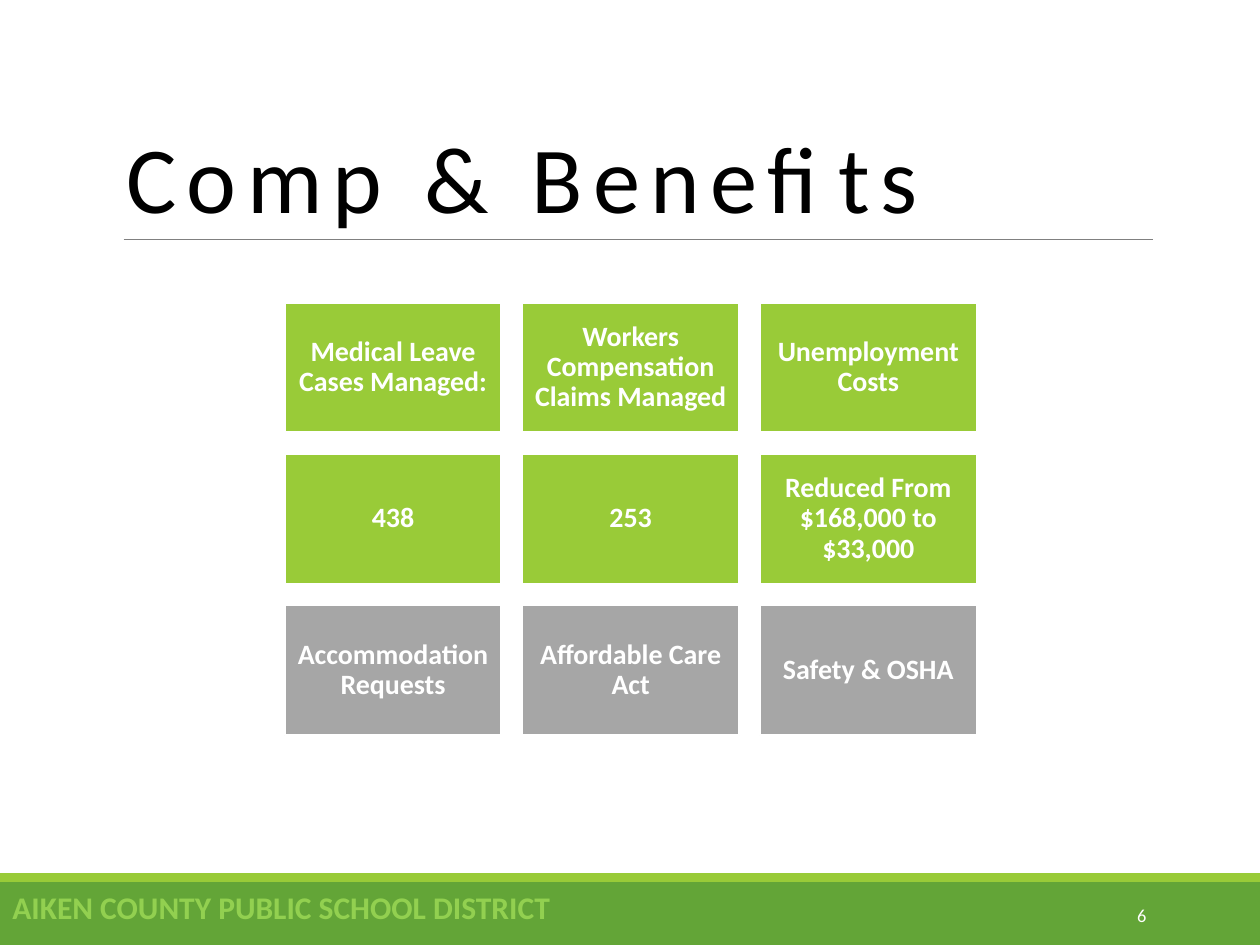
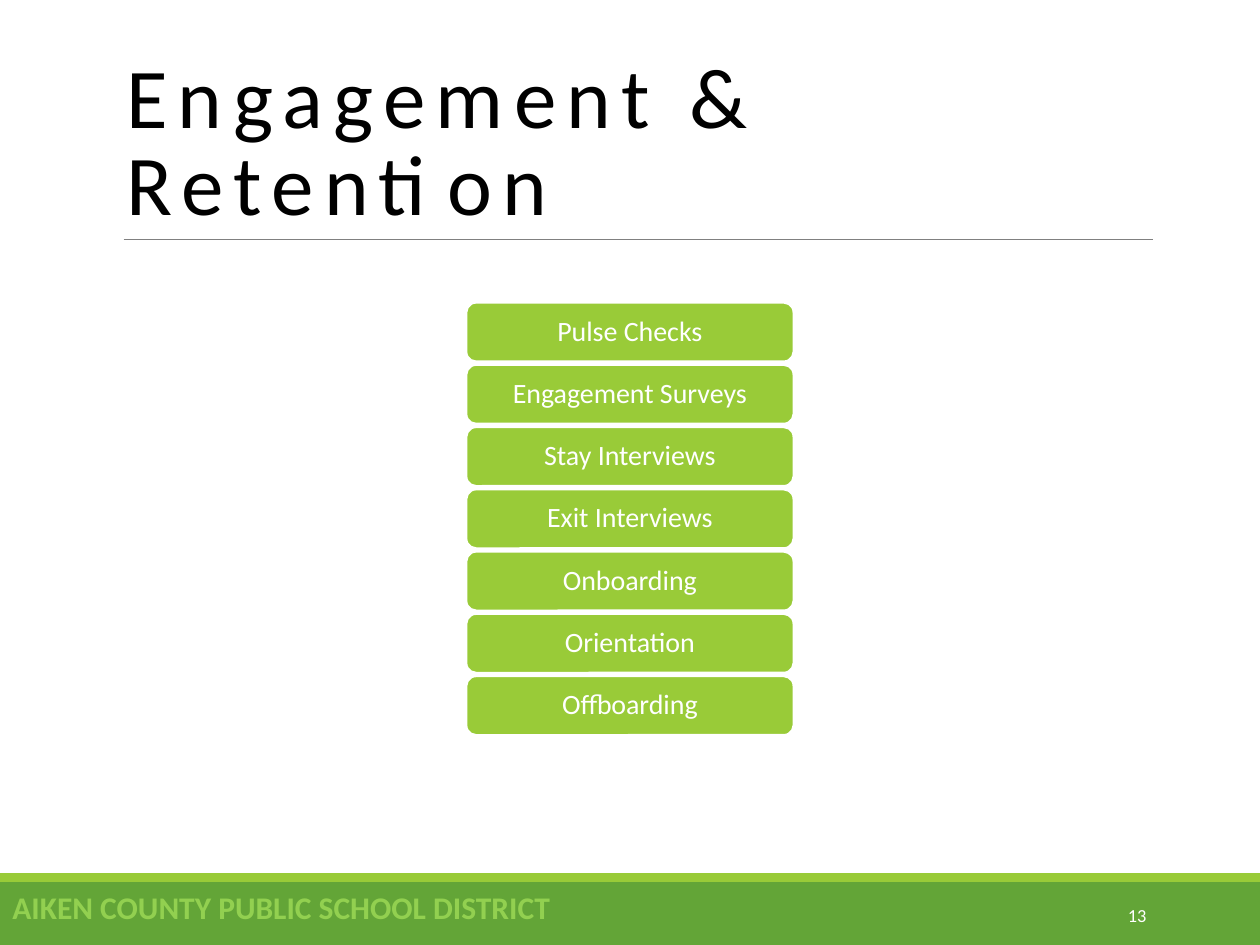
import pptx
import pptx.dml.color
import pptx.enum.shapes
import pptx.enum.text
import pptx.oxml.ns
import pptx.util
from lxml import etree

Cm = pptx.util.Cm
Pt = pptx.util.Pt
PRESET = pptx.enum.shapes.MSO_SHAPE
ALIGN = pptx.enum.text.PP_ALIGN
ANCHOR = pptx.enum.text.MSO_ANCHOR

COLORS = {
    "lime": "99CB38",
    "green": "63A537",
    "gray": "A6A6A6",
    "rule": "808080",
    "district": "92D050",
    "black": "000000",
    "white": "FFFFFF",
}
FONT = "Calibri"
TITLE_ONLY = 5
SLIDE_WIDTH, SLIDE_HEIGHT = 25.4, 19.05
TITLE_BOX = (2.29, 0.79, 20.96, 4.04)
FOOTER_BOX = (0, 17.6, SLIDE_WIDTH, 1.45)
GRID_BOX = (5.74, 6.1, 13.95, 8.72)
STACK_BOX = (9.4, 6.1, 6.6, 8.72)

BENEFITS = [
    ("lime", ["Medical Leave Cases Managed:", "Workers Compensation Claims Managed",
              "Unemployment Costs"]),
    ("lime", ["438", "253", "Reduced From $168,000 to $33,000"]),
    ("gray", ["Accommodation Requests", "Affordable Care Act", "Safety & OSHA"]),
]
PRACTICES = ["Pulse Checks", "Engagement Surveys", "Stay Interviews", "Exit Interviews",
             "Onboarding", "Orientation", "Offboarding"]


def rgb(color):
    return pptx.dml.color.RGBColor.from_string(COLORS[color])


def write_text(shape, text, size=16, color="white", bold=False, align=ALIGN.LEFT,
               anchor=ANCHOR.MIDDLE, line_spacing=1.0, letter_spacing=0, insets=(0.25, 0.13)):
    frame = shape.text_frame
    frame.word_wrap = True
    frame.auto_size = pptx.enum.text.MSO_AUTO_SIZE.NONE
    frame.vertical_anchor = anchor
    frame.margin_left = frame.margin_right = Cm(insets[0])
    frame.margin_top = frame.margin_bottom = Cm(insets[1])
    paragraph = frame.paragraphs[0]
    paragraph.alignment = align
    paragraph.line_spacing = line_spacing
    run = paragraph.add_run()
    run.text = text
    run.font.name = FONT
    run.font.size = Pt(size)
    run.font.bold = bold
    run.font.color.rgb = rgb(color)
    if letter_spacing:
        run.font._element.set("spc", str(letter_spacing * 100))


def add_block(slide, box, fill, line=None, preset=PRESET.RECTANGLE):
    shape = slide.shapes.add_shape(preset, *map(Cm, box))
    shape.shadow.inherit = False
    shape.fill.solid()
    shape.fill.fore_color.rgb = rgb(fill)
    if line:
        shape.line.color.rgb = rgb(line)
        shape.line.width = Pt(1.25)
    else:
        shape.line.fill.background()
    return shape


def add_title(slide, box, text, size):
    left, top, width, height = box
    title = slide.shapes.title
    title.left, title.top, title.width, title.height = map(Cm, box)
    write_text(title, text, size=size, color="black", anchor=ANCHOR.BOTTOM,
               line_spacing=0.85, letter_spacing=6)
    bottom = Cm(top + height)
    rule = slide.shapes.add_connector(pptx.enum.shapes.MSO_CONNECTOR.STRAIGHT,
                                      Cm(left + 0.2), bottom, Cm(left + width), bottom)
    rule.line.color.rgb = rgb("rule")
    rule.line.width = Pt(0.5)
    etree.SubElement(rule._element.spPr, pptx.oxml.ns.qn("a:effectLst"))


def add_footer(slide, box, number):
    left, top, width, height = box
    strip = 0.18
    band_top = top + strip
    add_block(slide, (left, band_top, width, height - strip), "green")
    add_block(slide, (left, top, width, strip), "lime")
    number_box = slide.shapes.add_textbox(Cm(left + 20.62), Cm(band_top + 0.15), Cm(2.74), Cm(1.02))
    write_text(number_box, str(number), size=10.5, align=ALIGN.RIGHT)
    district_box = slide.shapes.add_textbox(Cm(left), Cm(band_top), Cm(width), Cm(1.02))
    write_text(district_box, "AIKEN COUNTY PUBLIC SCHOOL DISTRICT", size=18,
               color="district", bold=True, anchor=ANCHOR.TOP)


def add_benefit_grid(slide, box, rows):
    left, top, width, height = box
    cell_width, cell_height = 4.37, 2.62
    column_step = (width - cell_width) / (len(rows[0][1]) - 1)
    row_step = (height - cell_height) / (len(rows) - 1)
    for row, (fill, labels) in enumerate(rows):
        for column, label in enumerate(labels):
            cell_box = (left + column * column_step, top + row * row_step, cell_width, cell_height)
            cell = add_block(slide, cell_box, fill, line="white")
            write_text(cell, label, bold=True, align=ALIGN.CENTER,
                       line_spacing=0.9, insets=(0.17, 0.17))


def add_practice_stack(slide, box, practices):
    left, top, width, height = box
    bar_height = 1.19
    step = (height - bar_height) / (len(practices) - 1)
    for index, practice in enumerate(practices):
        bar = add_block(slide, (left, top + index * step, width, bar_height), "lime",
                        line="white", preset=PRESET.ROUNDED_RECTANGLE)
        write_text(bar, practice, align=ALIGN.CENTER, line_spacing=0.9, insets=(0.17, 0.08))


def add_base_slide(presentation, title, title_size, number):
    slide = presentation.slides.add_slide(presentation.slide_layouts[TITLE_ONLY])
    add_footer(slide, FOOTER_BOX, number)
    add_title(slide, TITLE_BOX, title, title_size)
    return slide


def main():
    presentation = pptx.Presentation()
    presentation.slide_width = Cm(SLIDE_WIDTH)
    presentation.slide_height = Cm(SLIDE_HEIGHT)
    benefits_slide = add_base_slide(presentation, "Comp & Benefits", 54, 6)
    add_benefit_grid(benefits_slide, GRID_BOX, BENEFITS)
    engagement_slide = add_base_slide(presentation, "Engagement & Retention", 48.6, 13)
    add_practice_stack(engagement_slide, STACK_BOX, PRACTICES)
    presentation.save("out.pptx")


if __name__ == "__main__":
    main()
